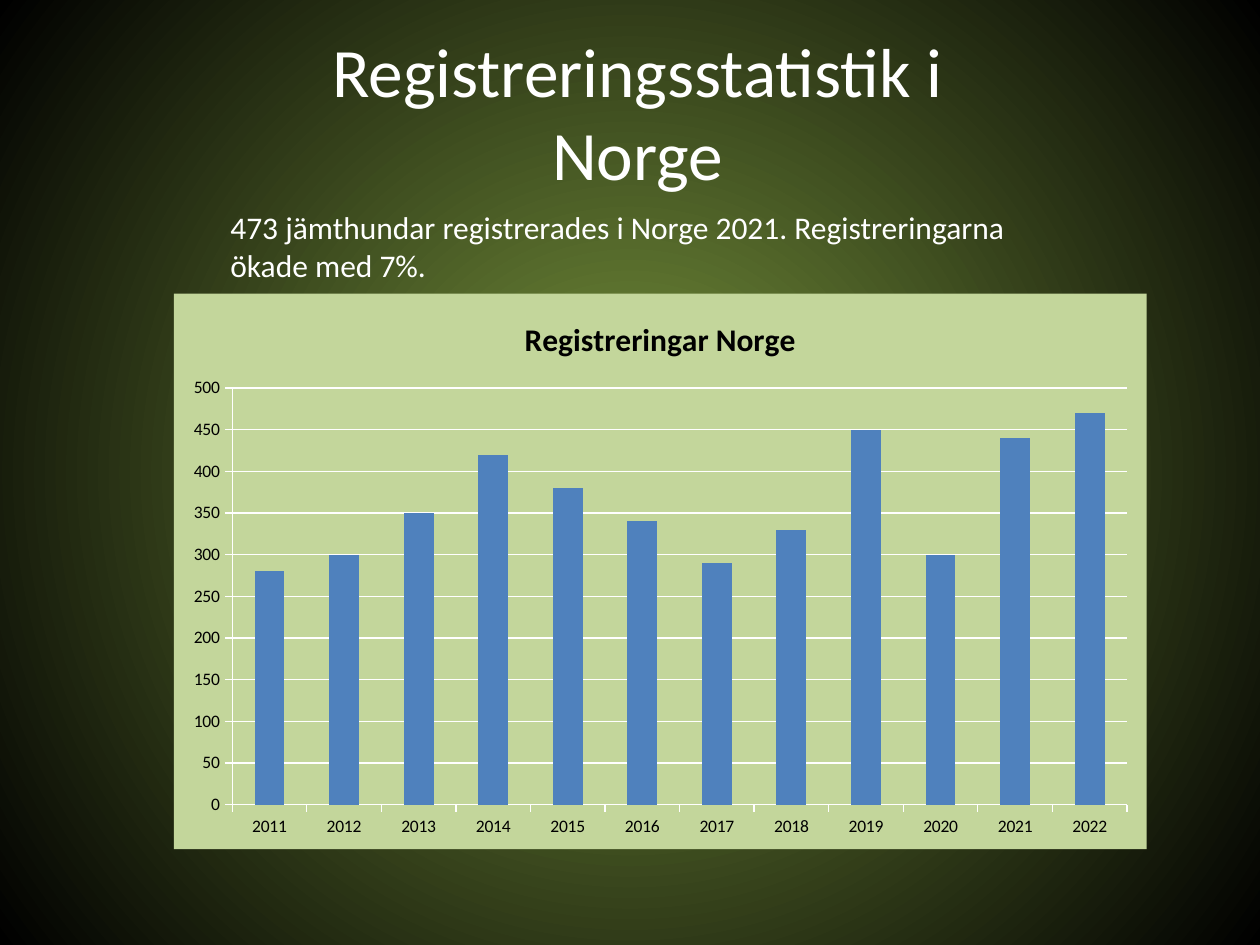
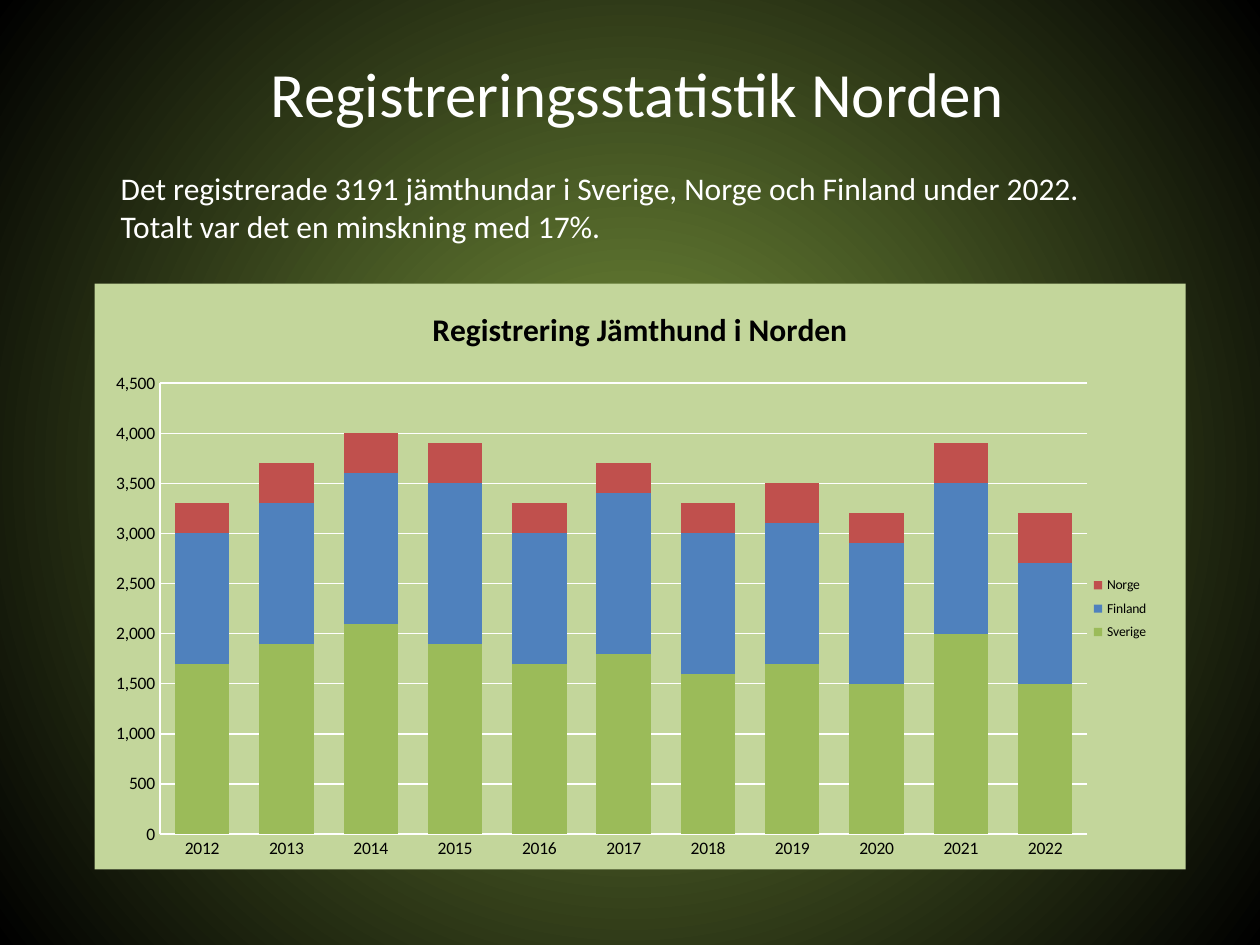
from lxml import etree
from pptx import Presentation
from pptx.chart.data import CategoryChartData
from pptx.dml.color import RGBColor
from pptx.enum.chart import XL_CHART_TYPE as CT, XL_LEGEND_POSITION as LP, XL_TICK_MARK as TM
from pptx.enum.text import MSO_ANCHOR, PP_ALIGN
from pptx.oxml import parse_xml
from pptx.oxml.ns import nsdecls, qn
from pptx.util import Inches, Pt

FONT = "Calibri"
WHITE, BLACK = "FFFFFF", "000000"
GLOW, PANEL = "77933C", "C3D69B"
BLUE, GREEN, RED = "4F81BD", "9BBB59", "C0504D"


def rgb(value):
    return RGBColor.from_string(value)


def style_font(font, size, color, bold=False):
    font.name, font.size, font.bold = FONT, Pt(size), bold
    font.color.rgb = rgb(color)


def set_background(master):
    """Round glow from the centre, shared by all slides."""
    fill = master.background.fill
    fill.gradient()
    for stop, color, pos in zip(fill.gradient_stops, (GLOW, BLACK), (0, 1)):
        stop.color.rgb = rgb(color)
        stop.position = pos
    grad = master.element.find(".//" + qn("a:gradFill"))
    grad.replace(grad.find(qn("a:lin")), parse_xml(
        f'<a:path {nsdecls("a")} path="circle">'
        '<a:fillToRect l="50000" t="50000" r="50000" b="50000"/></a:path>'))


def add_text(s, text, box, size, align=PP_ALIGN.LEFT, anchor=MSO_ANCHOR.TOP):
    tf = s.shapes.add_textbox(*map(Inches, box)).text_frame
    tf.word_wrap = True
    tf.vertical_anchor = anchor
    p = tf.paragraphs[0]
    p.text = text
    p.alignment = align
    style_font(p.runs[0].font, size, WHITE)


def add_title(s, text, top, size):
    add_text(s, text, (1.85, top, 6.42, 1.22), size, PP_ALIGN.CENTER, MSO_ANCHOR.MIDDLE)


def set_layout(parent, index, box, inner=False):
    """Place a chart part by fractions of the chart: x, y, w, h."""
    old = parent.find(qn("c:layout"))
    if old is not None:
        parent.remove(old)
    layout = parse_xml(f'<c:layout {nsdecls("c")}><c:manualLayout/></c:layout>')
    settings = [("layoutTarget", "inner")] if inner else []
    settings += [("xMode", "edge"), ("yMode", "edge"), *zip("xywh", box)]
    for tag, value in settings:
        etree.SubElement(layout[0], qn("c:" + tag)).set("val", str(value))
    parent.insert(index, layout)


def style_axis(axis, tick):
    style_font(axis.tick_labels.font, 10, BLACK)
    axis.major_tick_mark = tick
    axis.format.line.color.rgb = rgb(WHITE)


def add_chart(s, kind, title, box, plot_box, years, series, gap, top_value, step, tick):
    data = CategoryChartData()
    data.categories = [str(year) for year in years]
    for name, values, _ in series:
        data.add_series(name, values)
    chart = s.shapes.add_chart(kind, *map(Inches, box), data).chart
    style_font(chart.font, 10, BLACK)

    # Panel behind the chart
    panel = parse_xml(f'<c:spPr {nsdecls("c", "a")}><a:solidFill><a:srgbClr val="{PANEL}"/>'
                      '</a:solidFill><a:ln><a:noFill/></a:ln></c:spPr>')
    chart.element.find(qn("c:chart")).addnext(panel)

    chart.has_title = True
    p = chart.chart_title.text_frame.paragraphs[0]
    p.text = title
    style_font(p.runs[0].font, 18, BLACK, bold=True)
    chart.chart_title.include_in_layout = False
    chart.has_legend = False

    # Columns
    plot = chart.plots[0]
    plot.gap_width = gap
    plot.vary_by_categories = False
    if kind == CT.COLUMN_STACKED:
        plot.overlap = 100
    for ser, (_, _, color) in zip(plot.series, series):
        ser.format.fill.solid()
        ser.format.fill.fore_color.rgb = rgb(color)

    # Axes and grid
    style_axis(chart.category_axis, tick)
    axis = chart.value_axis
    style_axis(axis, tick)
    axis.minimum_scale, axis.maximum_scale, axis.major_unit = 0, top_value, step
    axis.has_major_gridlines = True
    axis.major_gridlines.format.line.color.rgb = rgb(WHITE)
    set_layout(chart.element.find(".//" + qn("c:plotArea")), 0, plot_box, inner=True)
    return chart


def add_legend(chart, box):
    chart.has_legend = True
    legend = chart.legend
    legend.position = LP.RIGHT
    legend.include_in_layout = False
    style_font(legend.font, 7.8, BLACK)
    set_layout(chart.element.find(".//" + qn("c:legend")), 1, box)


def add_norway_slide(s):
    add_title(s, "Registreringsstatistik i Norge", 0.27, 39.6)
    add_text(s, "473 jämthundar registrerades i Norge 2021. Registreringarna ökade med 7%.",
             (1.73, 1.6, 6.89, 1.01), 18)
    counts = [280, 300, 350, 420, 380, 340, 290, 330, 450, 300, 440, 470]
    add_chart(s, CT.COLUMN_CLUSTERED, "Registreringar Norge", (1.38, 2.33, 7.72, 4.41),
              (0.06, 0.17, 0.92, 0.75), range(2011, 2023), [("Series 1", counts, BLUE)],
              gap=150, top_value=500, step=50, tick=TM.OUTSIDE)


def add_nordic_slide(s):
    add_title(s, "Registreringsstatistik Norden", 0.12, 36)
    add_text(s, "Det registrerade 3191 jämthundar i Sverige, Norge och Finland under 2022. "
             "Totalt var det en minskning med 17%.", (0.86, 1.29, 8.03, 0.71), 18)
    countries = [
        ("Sverige", [1700, 1900, 2100, 1900, 1700, 1800, 1600, 1700, 1500, 2000, 1500], GREEN),
        ("Finland", [1300, 1400, 1500, 1600, 1300, 1600, 1400, 1400, 1400, 1500, 1200], BLUE),
        ("Norge", [300, 400, 400, 400, 300, 300, 300, 400, 300, 400, 500], RED),
    ]
    chart = add_chart(s, CT.COLUMN_STACKED, "Registrering Jämthund i Norden",
                      (0.75, 2.25, 8.66, 4.65), (0.06, 0.17, 0.85, 0.77),
                      range(2012, 2023), countries,
                      gap=55, top_value=4500, step=500, tick=TM.NONE)
    labels = chart.value_axis.tick_labels
    labels.number_format, labels.number_format_is_linked = "#,##0", False
    add_legend(chart, (0.91, 0.49, 0.06, 0.13))


def main():
    prs = Presentation()
    prs.slide_width, prs.slide_height = Inches(10), Inches(7.5)
    set_background(prs.slide_master)
    blank = prs.slide_layouts[6]
    for build in (add_norway_slide, add_nordic_slide):
        build(prs.slides.add_slide(blank))
    prs.save("out.pptx")


if __name__ == "__main__":
    main()
